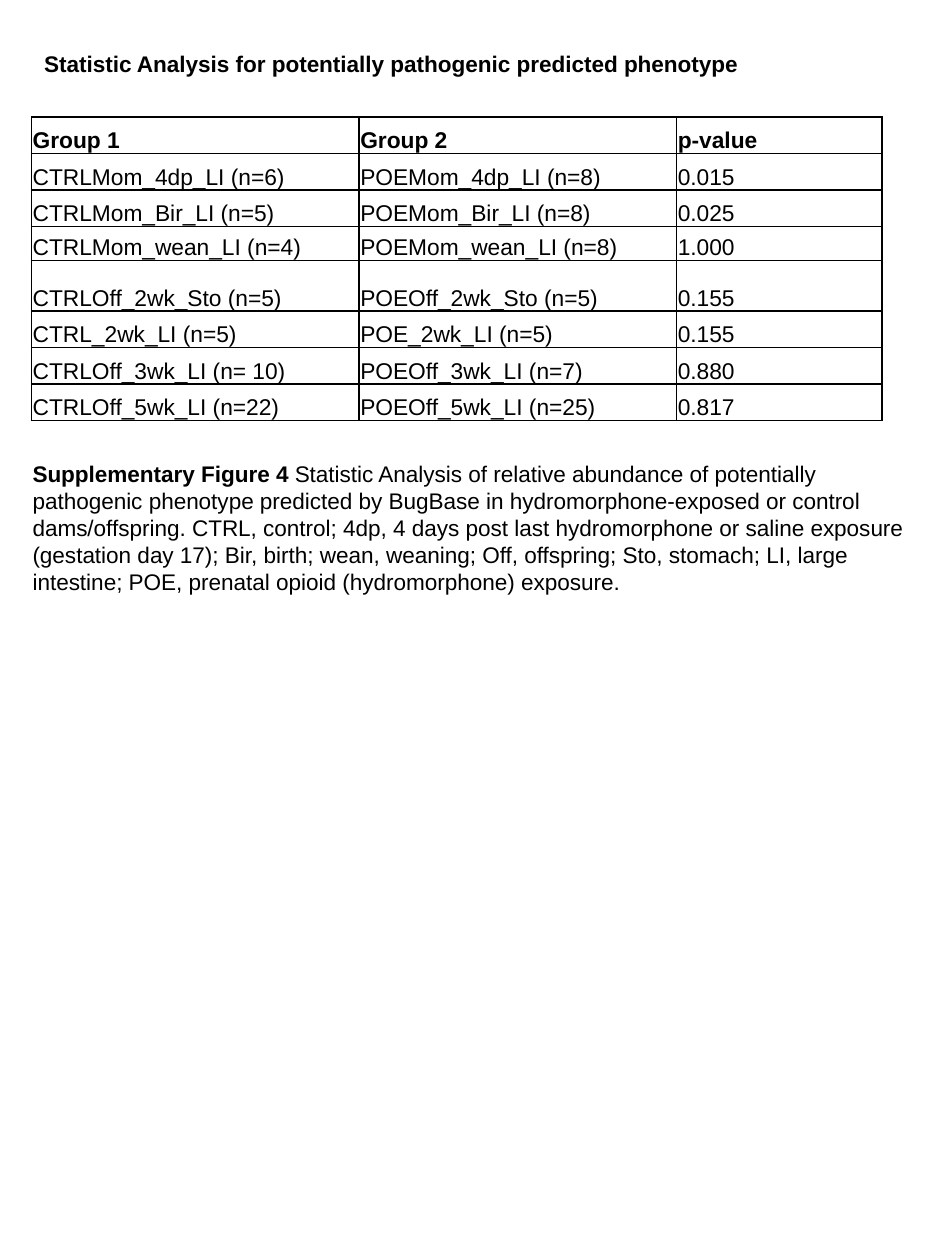
"""Build the slide with the p-value table of predicted pathogenic phenotypes."""
from lxml import etree
from pptx import Presentation
from pptx.dml.color import RGBColor
from pptx.enum.text import MSO_ANCHOR, MSO_AUTO_SIZE, PP_ALIGN
from pptx.oxml.ns import qn
from pptx.util import Inches, Pt

TOP, BOTTOM = MSO_ANCHOR.TOP, MSO_ANCHOR.BOTTOM
LEFT = PP_ALIGN.LEFT
NO_FIT = MSO_AUTO_SIZE.NONE
INK = {"text": "000000", "rule": "000000"}
WIDTHS = [2.6, 2.52, 1.63]
HEIGHTS = [0.29] * 3 + [0.27, 0.4] + [0.29] * 3
ROWS = [
    ("Group 1", "Group 2", "p-value"),
    ("CTRLMom_4dp_LI (n=6)", "POEMom_4dp_LI (n=8)", "0.015"),
    ("CTRLMom_Bir_LI (n=5)", "POEMom_Bir_LI (n=8)", "0.025"),
    ("CTRLMom_wean_LI (n=4)", "POEMom_wean_LI (n=8)", "1.000"),
    ("CTRLOff_2wk_Sto (n=5)", "POEOff_2wk_Sto (n=5)", "0.155"),
    ("CTRL_2wk_LI (n=5)", "POE_2wk_LI (n=5)", "0.155"),
    ("CTRLOff_3wk_LI (n= 10)", "POEOff_3wk_LI (n=7)", "0.880"),
    ("CTRLOff_5wk_LI (n=22)", "POEOff_5wk_LI (n=25)", "0.817"),
]
LABEL = "Supplementary Figure 4 "
NOTE = (
    "Statistic Analysis of relative abundance of potentially pathogenic phenotype "
    "predicted by BugBase in hydromorphone-exposed or control dams/offspring. "
    "CTRL, control; 4dp, 4 days post last hydromorphone or saline exposure "
    "(gestation day 17); Bir, birth; wean, weaning; Off, offspring; Sto, stomach; "
    "LI, large intestine; POE, prenatal opioid (hydromorphone) exposure."
)


def style(para, size, bold=None):
    para.alignment = LEFT
    para.font.name = "Arial"
    para.font.size = Pt(size)
    para.font.bold = bold
    para.font.color.rgb = RGBColor.from_string(INK["text"])


def border(cell):
    props = cell._tc.get_or_add_tcPr()
    for side in ("lnL", "lnR", "lnT", "lnB"):
        line = etree.SubElement(props, qn(f"a:{side}"), w=str(Pt(1)))
        fill = etree.SubElement(line, qn("a:solidFill"))
        etree.SubElement(fill, qn("a:srgbClr"), val=INK["rule"])


deck = Presentation()
deck.slide_width, deck.slide_height = Inches(7.5), Inches(10)
wide, high = deck.slide_width, deck.slide_height
slide = deck.slides.add_slide(deck.slide_layouts[5])

title = slide.shapes.title
title.left, title.top = Inches(0.25), int(high * 0.035)
title.width, title.height = Inches(5.97), int(high * 0.032)
frame = title.text_frame
frame.text = "Statistic Analysis for potentially pathogenic predicted phenotype"
frame.auto_size = NO_FIT
frame.vertical_anchor = TOP
style(frame.paragraphs[0], 12.9, True)

grid = slide.shapes.add_table(
    len(ROWS), len(WIDTHS), Inches(0.25), int(high * 0.093),
    Inches(sum(WIDTHS)), Inches(sum(HEIGHTS))).table
grid.first_row = grid.horz_banding = False
for col, width in zip(grid.columns, WIDTHS):
    col.width = Inches(width)
for i, (row, height, texts) in enumerate(zip(grid.rows, HEIGHTS, ROWS)):
    row.height = Inches(height)
    for cell, text in zip(row.cells, texts):
        cell.text = text
        cell.vertical_anchor = BOTTOM
        cell.margin_left = cell.margin_right = cell.margin_top = Inches(0.01)
        cell.margin_bottom = 0
        style(cell.text_frame.paragraphs[0], 13, i == 0)
        border(cell)
        cell.fill.background()

box = slide.shapes.add_textbox(
    Inches(0.16), int(high * 0.36), Inches(7.18), int(high * 0.118))
box.text_frame.word_wrap = True
para = box.text_frame.paragraphs[0]
style(para, 12.9)
for text, bold in ((LABEL, True), (NOTE, False)):
    run = para.add_run()
    run.text = text
    run.font.bold = bold

deck.save("out.pptx")
